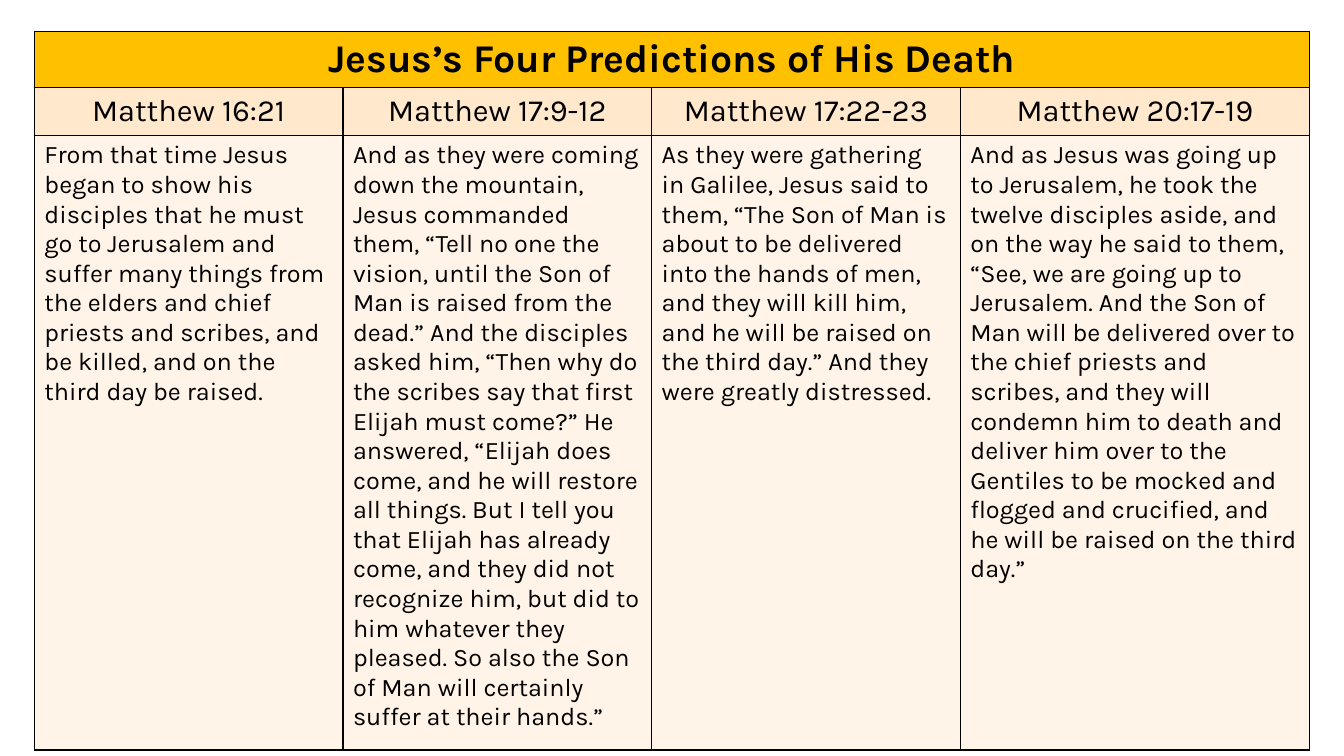
from lxml.etree import SubElement as Sub
from pptx import Presentation
from pptx.dml.color import RGBColor as RGB
from pptx.enum.text import PP_ALIGN as Align
from pptx.oxml.ns import qn
from pptx.util import Pt

BLACK = RGB(0x00, 0x00, 0x00)
GOLD = RGB(0xFF, 0xC0, 0x00)
PEACH = RGB(0xFF, 0xE8, 0xCC)
CREAM = RGB(0xFF, 0xF4, 0xE7)
FONT = "Karla"

TITLE = "Jesus’s Four Predictions of His Death"
VERSES = [
    ("Matthew 16:21",
     "From that time Jesus began to show his disciples that he must go to "
     "Jerusalem and suffer many things from the elders and chief priests and "
     "scribes, and be killed, and on the third day be raised."),
    ("Matthew 17:9-12",
     "And as they were coming down the mountain, Jesus commanded them, “Tell "
     "no one the vision, until the Son of Man is raised from the dead.” And "
     "the disciples asked him, “Then why do the scribes say that first Elijah "
     "must come?” He answered, “Elijah does come, and he will restore all "
     "things. But I tell you that Elijah has already come, and they did not "
     "recognize him, but did to him whatever they pleased. So also the Son of "
     "Man will certainly suffer at their hands.”"),
    ("Matthew 17:22-23",
     "As they were gathering in Galilee, Jesus said to them, “The Son of Man "
     "is about to be delivered into the hands of men, and they will kill him, "
     "and he will be raised on the third day.” And they were greatly "
     "distressed."),
    ("Matthew 20:17-19",
     "And as Jesus was going up to Jerusalem, he took the twelve disciples "
     "aside, and on the way he said to them, “See, we are going up to "
     "Jerusalem. And the Son of Man will be delivered over to the chief "
     "priests and scribes, and they will condemn him to death and deliver him "
     "over to the Gentiles to be mocked and flogged and crucified, and he "
     "will be raised on the third day.”"),
]


def rule(cell):
    """Draw a thin black border on all four sides."""
    props = cell._tc.get_or_add_tcPr()
    for side in ("lnL", "lnR", "lnT", "lnB"):
        line = Sub(props, qn("a:" + side), w=str(Pt(1)))
        fill = Sub(line, qn("a:solidFill"))
        Sub(fill, qn("a:srgbClr"), val=str(BLACK))


def style(cell, text, size, color, align, bold=False):
    rule(cell)
    cell.fill.solid()
    cell.fill.fore_color.rgb = color
    cell.text = text
    para = cell.text_frame.paragraphs[0]
    para.alignment = align
    font = para.font
    font.name, font.size, font.bold = FONT, Pt(size), bold
    font.color.rgb = BLACK


def verse_table(slide, left, top, width, height):
    count = len(VERSES)
    table = slide.shapes.add_table(
        3, count, Pt(left), Pt(top), Pt(width), Pt(height)).table

    # The last column takes the width left by the equal ones
    narrow = 220.5
    widths = [narrow] * (count - 1) + [width - narrow * (count - 1)]
    for col, wide in zip(table.columns, widths):
        col.width = Pt(wide)
    title, head = 40.5, 34.2
    for row, tall in zip(table.rows, (title, head, height - title - head)):
        row.height = Pt(tall)

    # Title band
    table.cell(0, 0).merge(table.cell(0, count - 1))
    style(table.cell(0, 0), TITLE, 28, GOLD, Align.CENTER, True)
    for i in range(1, count):
        rule(table.cell(0, i))

    # References and passages
    for i, (ref, verse) in enumerate(VERSES):
        style(table.cell(1, i), ref, 22, PEACH, Align.CENTER)
        style(table.cell(2, i), verse, 18, CREAM, Align.LEFT)


def main():
    deck = Presentation()
    deck.slide_width, deck.slide_height = Pt(960), Pt(540)
    slide = deck.slides.add_slide(deck.slide_layouts[6])
    verse_table(slide, 24.5, 22.3, 911, 513.5)
    deck.save("out.pptx")


if __name__ == "__main__":
    main()
